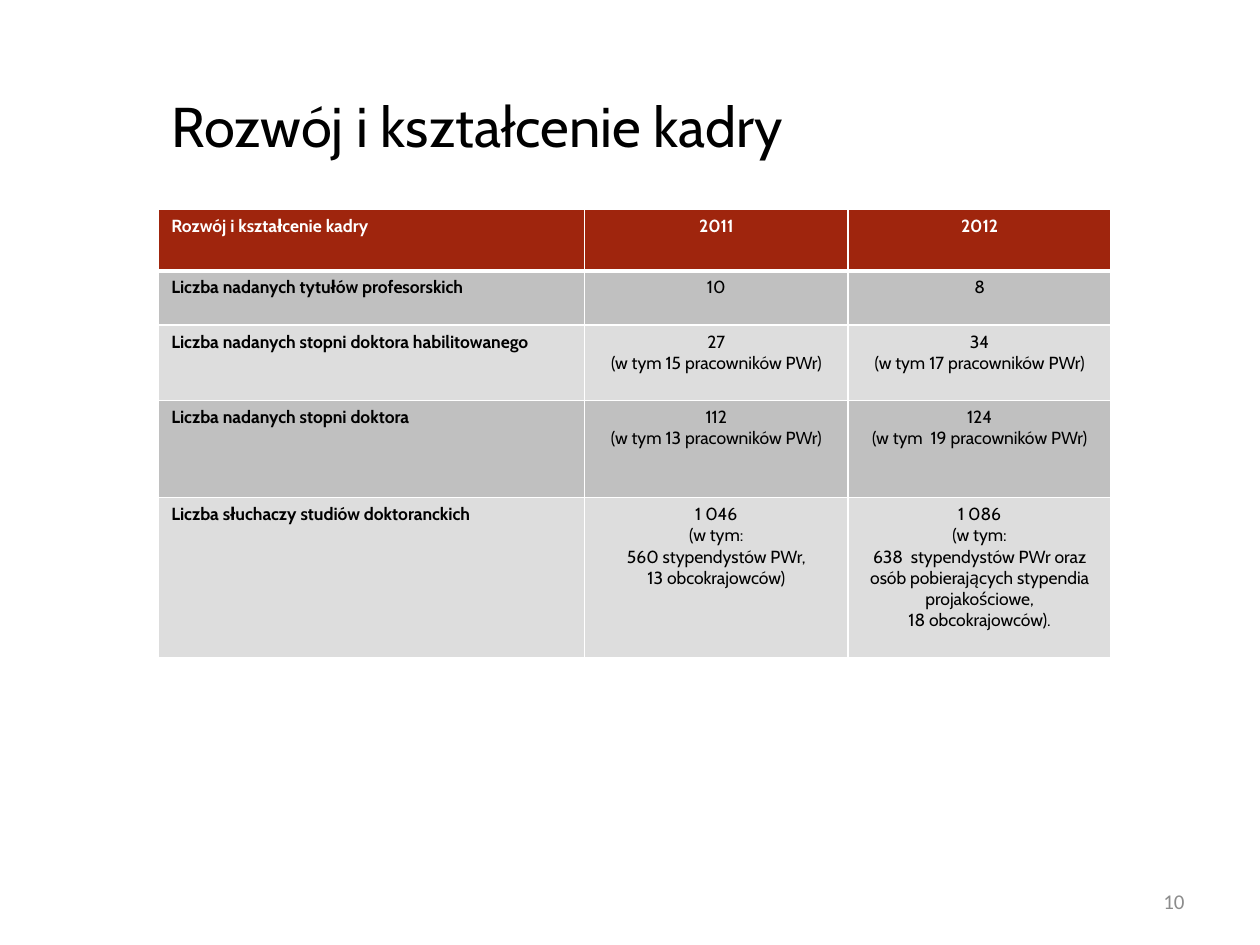
import pptx
import pptx.dml.color
import pptx.enum.text
import pptx.oxml
import pptx.oxml.ns
import pptx.util

Inches = pptx.util.Inches
Pt = pptx.util.Pt
ALIGN = pptx.enum.text.PP_ALIGN
MIDDLE = pptx.enum.text.MSO_ANCHOR.MIDDLE

COLS = [3.38, 2.09, 2.09]
ROWS = [0.49, 0.43, 0.6, 0.77, 1.27]
FILLS = ["9F250D", "C0C0C0", "DDDDDD", "C0C0C0", "DDDDDD"]
DATA = [
    [["Rozwój i kształcenie kadry"], ["2011"], ["2012"]],
    [["Liczba nadanych tytułów profesorskich"], ["10"], ["8"]],
    [["Liczba nadanych stopni doktora habilitowanego"],
     ["27", "(w tym 15 pracowników PWr)"],
     ["34", "(w tym 17 pracowników PWr)"]],
    [["Liczba nadanych stopni doktora"],
     ["112", "(w tym 13 pracowników PWr)"],
     ["124", "(w tym  19 pracowników PWr)"]],
    [["Liczba słuchaczy studiów doktoranckich"],
     ["1 046", "(w tym:\n560 stypendystów PWr,", "13 obcokrajowców)"],
     ["1 086",
      "(w tym:\n638  stypendystów PWr oraz osób pobierających "
      "stypendia projakościowe,",
      "18 obcokrajowców)."]],
]


def paint(color, value):
    color.rgb = pptx.dml.color.RGBColor.from_string(value)


def write(frame, lines, size, font, color, align, bold=False):
    frame.word_wrap = True
    for i, line in enumerate(lines):
        para = frame.paragraphs[0] if i == 0 else frame.add_paragraph()
        para.alignment = align
        for j, part in enumerate(line.split("\n")):
            if j:
                para.add_line_break()
            run = para.add_run()
            run.text = part
            run.font.size = Pt(size)
            run.font.name = font
            run.font.bold = bold
            paint(run.font.color, color)


def border(cell, top, bottom):
    props = cell._tc.get_or_add_tcPr()
    for side, width in (("L", 1), ("R", 1), ("T", top), ("B", bottom)):
        props.append(pptx.oxml.parse_xml(
            f'<a:ln{side} {pptx.oxml.ns.nsdecls("a")} w="{Pt(width)}">'
            '<a:solidFill><a:srgbClr val="FFFFFF"/></a:solidFill>'
            f'</a:ln{side}>'))


def add_title(slide, box):
    title = slide.shapes.title
    title.left, title.top, title.width, title.height = box
    title.text_frame.vertical_anchor = MIDDLE
    write(title.text_frame, ["Rozwój i kształcenie kadry"], 32, "Cabin",
          "000000", ALIGN.LEFT)


def add_grid(slide, box):
    table = slide.shapes.add_table(len(ROWS), len(COLS), *box).table
    for col, width in zip(table.columns, COLS):
        col.width = Inches(width)
    for r, texts in enumerate(DATA):
        table.rows[r].height = Inches(ROWS[r])
        for c, lines in enumerate(texts):
            cell = table.cell(r, c)
            border(cell, 3 if r == 1 else 1, 3 if r == 0 else 1)
            cell.fill.solid()
            paint(cell.fill.fore_color, FILLS[r])
            write(cell.text_frame, lines, 10, "Cabin",
                  "000000" if r else "FFFFFF",
                  ALIGN.CENTER if c else ALIGN.LEFT, r == 0 or c == 0)


def add_number(slide, box):
    frame = slide.shapes.add_textbox(*box).text_frame
    frame.vertical_anchor = MIDDLE
    write(frame, ["10"], 12, "Calibri", "8C8C8C", ALIGN.RIGHT)


def main():
    deck = pptx.Presentation()
    deck.slide_width, deck.slide_height = Inches(10), Inches(7.5)
    slide = deck.slides.add_slide(deck.slide_layouts[5])
    add_title(slide, [Inches(n) for n in (1.26, 0.6, 8.24, 0.79)])
    add_grid(slide, [Inches(n) for n in (1.26, 1.66, sum(COLS), sum(ROWS))])
    add_number(slide, [Inches(n) for n in (7.17, 6.95, 2.33, 0.4)])
    deck.save("out.pptx")


if __name__ == "__main__":
    main()
